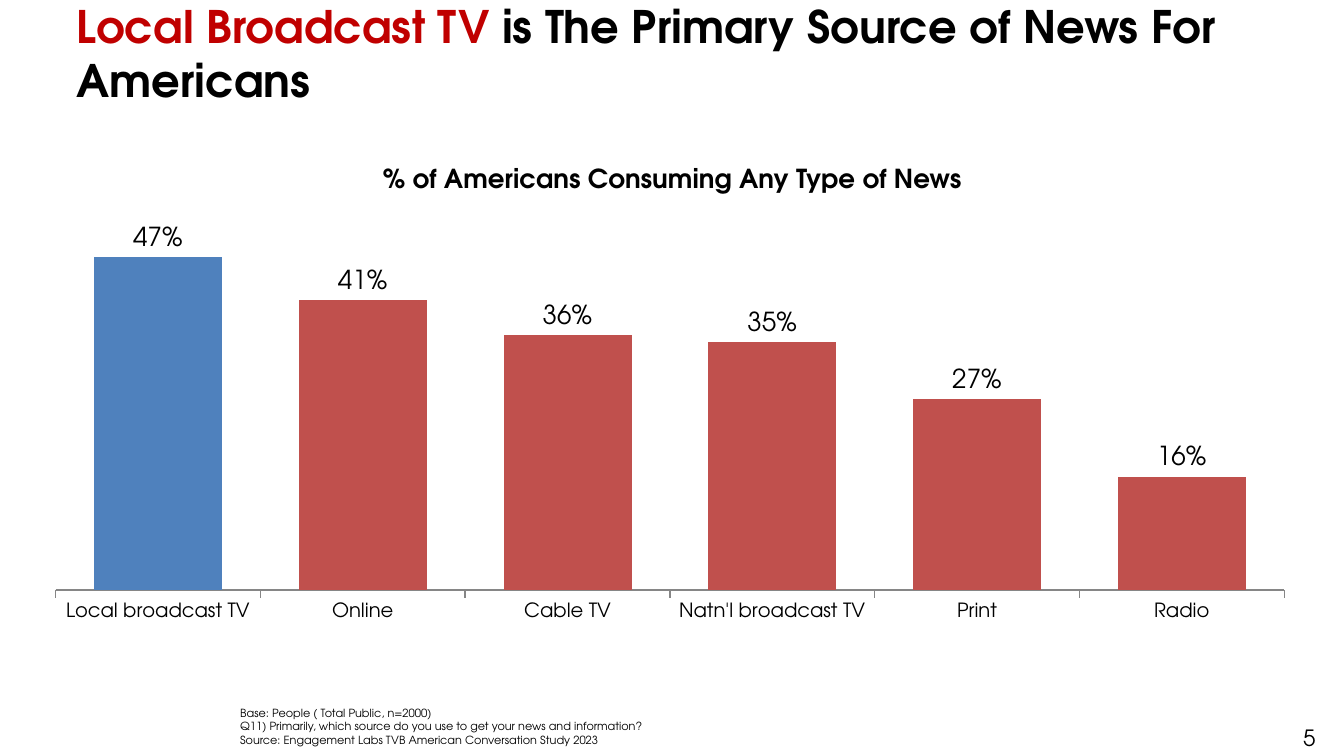
"""Build the slide on where Americans get their news."""
from dataclasses import dataclass

from lxml import etree
from pptx import Presentation
from pptx.chart.data import CategoryChartData
from pptx.dml.color import RGBColor
from pptx.enum.chart import XL_CHART_TYPE, XL_LABEL_POSITION, XL_TICK_LABEL_POSITION, XL_TICK_MARK
from pptx.enum.text import MSO_ANCHOR, MSO_AUTO_SIZE, PP_ALIGN
from pptx.oxml.ns import qn
from pptx.util import Emu, Pt

COLUMNS = XL_CHART_TYPE.COLUMN_CLUSTERED
OUTSIDE_END = XL_LABEL_POSITION.OUTSIDE_END
LABELS_LOW = XL_TICK_LABEL_POSITION.LOW
TICK_OUT = XL_TICK_MARK.OUTSIDE
TICK_NONE = XL_TICK_MARK.NONE
TOP, BOTTOM = MSO_ANCHOR.TOP, MSO_ANCHOR.BOTTOM
LEFT, CENTER = PP_ALIGN.LEFT, PP_ALIGN.CENTER
NO_FIT = MSO_AUTO_SIZE.NONE

TITLE = [("Local Broadcast TV ", "accent"),
         ("is The Primary Source of News For Americans", "text")]
SUBTITLE = "% of Americans Consuming Any Type of News"
NEWS_SOURCES = [("Local broadcast TV", 0.47), ("Online", 0.41), ("Cable TV", 0.36),
                ("Natn'l broadcast TV", 0.35), ("Print", 0.27), ("Radio", 0.16)]
NOTES = ["Base: People ( Total Public, n=2000)",
         "Q11) Primarily, which source do you use to get your news and information?",
         "Source: Engagement Labs TVB American Conversation Study 2023"]
PAGE = "5"

SLIDE = (1344, 756)
BOXES = {"title": (63, -1, 1244, 120), "chart": (55, 173, 1230, 528),
         "subtitle": (366, 156, 613, 46), "notes": (227, 699, 1095, 54),
         "page": (1290, 718, 54, 19)}
PLOT = {"x": 0, "y": 0.12, "w": 1, "h": 0.67}


@dataclass(frozen=True)
class Theme:
    font: str = "TeX Gyre Adventor"
    text: str = "000000"
    accent: str = "C00000"
    bar: str = "C0504D"
    lead_bar: str = "4F81BD"
    axis: str = "868686"
    title_size: float = 24
    subtitle_size: float = 14
    label_size: float = 14
    category_size: float = 10.5
    page_size: float = 12
    note_size: float = 6


THEME = Theme()


def px(n):
    return Emu(round(n * 914400 / 134.4))


def rgb(name):
    return RGBColor.from_string(getattr(THEME, name))


def style(font, size, color="text", bold=False):
    font.name, font.size, font.bold = THEME.font, Pt(size), bold
    font.color.rgb = rgb(color)


def add_text(slide, box, lines, size, bold=False, align=LEFT, anchor=TOP, wrap=True):
    tf = slide.shapes.add_textbox(*map(px, BOXES[box])).text_frame
    tf.word_wrap, tf.vertical_anchor = wrap, anchor
    tf.text = "\n".join(lines)
    for p in tf.paragraphs:
        p.alignment = align
        for r in p.runs:
            style(r.font, size, bold=bold)


def add_title(slide):
    sp = slide.shapes.title
    sp.left, sp.top, sp.width, sp.height = map(px, BOXES["title"])
    tf = sp.text_frame
    tf.auto_size, tf.vertical_anchor, tf.margin_top = NO_FIT, TOP, 0
    p = tf.paragraphs[0]
    p.alignment = LEFT
    for text, color in TITLE:
        r = p.add_run()
        r.text = text
        style(r.font, THEME.title_size, color, True)


def set_plot_layout(chart):
    area = chart._chartSpace.chart.plotArea
    for old in area.findall(qn("c:layout")):
        area.remove(old)
    layout = etree.Element(qn("c:layout"))
    manual = etree.SubElement(layout, qn("c:manualLayout"))
    values = {"layoutTarget": "inner", "xMode": "edge", "yMode": "edge", **PLOT}
    for tag, value in values.items():
        etree.SubElement(manual, qn(f"c:{tag}")).set("val", str(value))
    area.insert(0, layout)


def add_news_chart(slide):
    data = CategoryChartData(number_format="0%")
    data.categories = [name for name, _ in NEWS_SOURCES]
    data.add_series("Series 1", [share for _, share in NEWS_SOURCES])
    chart = slide.shapes.add_chart(COLUMNS, *map(px, BOXES["chart"]), data).chart
    chart.has_legend = chart.has_title = False
    style(chart.font, THEME.label_size)
    set_plot_layout(chart)

    shares = chart.value_axis
    shares.minimum_scale, shares.maximum_scale = 0, 0.5
    shares.has_major_gridlines = shares.visible = False
    names = chart.category_axis
    names.major_tick_mark, names.minor_tick_mark = TICK_OUT, TICK_NONE
    names.tick_label_position = LABELS_LOW
    names.format.line.color.rgb = rgb("axis")
    style(names.tick_labels.font, THEME.category_size)

    plot = chart.plots[0]
    plot.gap_width, plot.vary_by_categories = 60, False
    series = plot.series[0]
    for part, color in ((series, "bar"), (series.points[0], "lead_bar")):
        part.format.fill.solid()
        part.format.fill.fore_color.rgb = rgb(color)
    labels = series.data_labels
    labels.show_value, labels.position = True, OUTSIDE_END
    labels.number_format, labels.number_format_is_linked = "0%", False
    style(labels.font, THEME.label_size)


def main():
    prs = Presentation()
    prs.slide_width, prs.slide_height = map(px, SLIDE)
    slide = prs.slides.add_slide(prs.slide_layouts[5])
    add_title(slide)
    add_news_chart(slide)
    add_text(slide, "subtitle", [SUBTITLE], THEME.subtitle_size, bold=True,
             align=CENTER, wrap=False)
    add_text(slide, "notes", NOTES, THEME.note_size, anchor=BOTTOM)
    add_text(slide, "page", [PAGE], THEME.page_size)
    prs.save("out.pptx")


if __name__ == "__main__":
    main()
